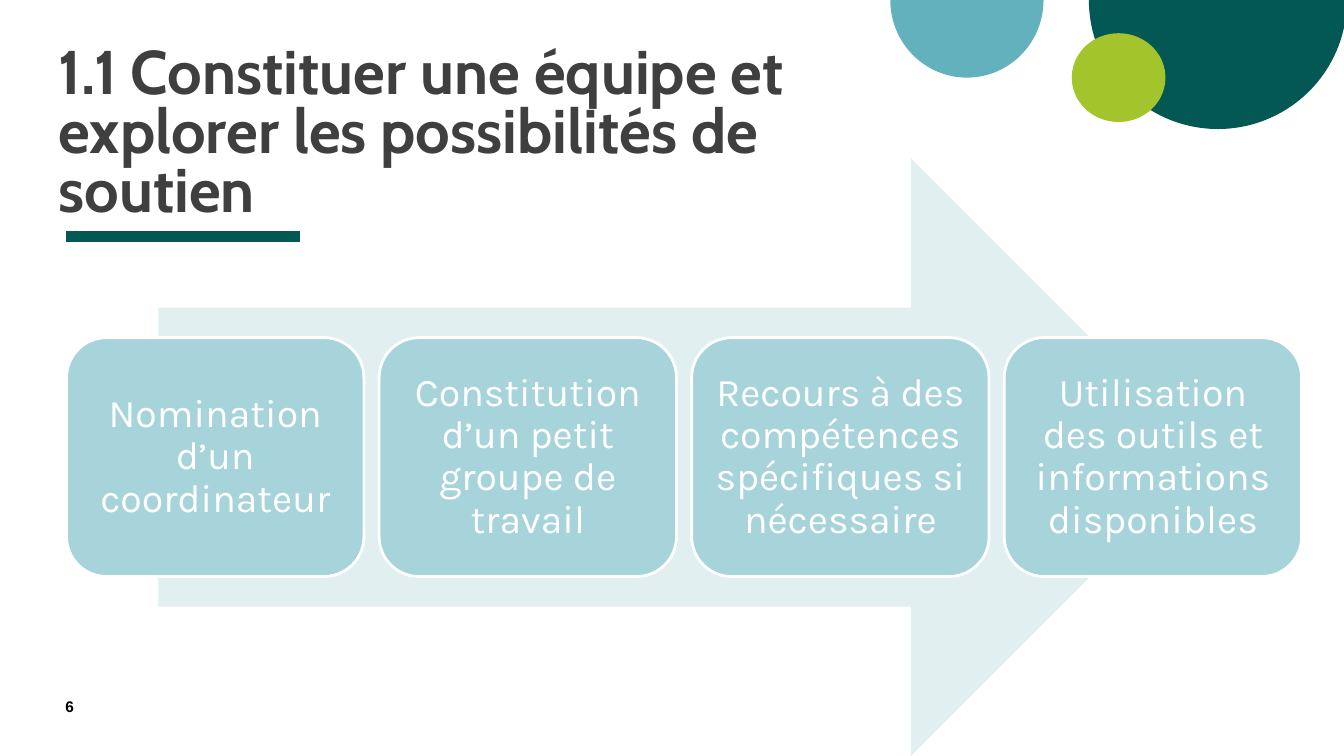
from dataclasses import dataclass

from lxml import etree
from pptx import Presentation
from pptx.dml.color import RGBColor
from pptx.enum.shapes import MSO_CONNECTOR, MSO_SHAPE
from pptx.enum.text import MSO_ANCHOR, MSO_AUTO_SIZE, PP_ALIGN
from pptx.oxml.ns import qn
from pptx.util import Inches, Pt

PIE, OVAL = MSO_SHAPE.PIE, MSO_SHAPE.OVAL
ARROW, ROUNDED = MSO_SHAPE.RIGHT_ARROW, MSO_SHAPE.ROUNDED_RECTANGLE
STRAIGHT = MSO_CONNECTOR.STRAIGHT
TOP, MIDDLE, BOTTOM = MSO_ANCHOR.TOP, MSO_ANCHOR.MIDDLE, MSO_ANCHOR.BOTTOM
LEFT, CENTER = PP_ALIGN.LEFT, PP_ALIGN.CENTER
NO_AUTOFIT = MSO_AUTO_SIZE.NONE

DARK_GREEN = "035854"
WHITE = "FFFFFF"
STEP_LEFT, STEP_PITCH = 0.66, 3.1


@dataclass
class Block:
    kind: int
    left: float
    top: float
    width: float
    height: float
    fill: str
    adjustments: tuple = ()
    line: str = ""


DECORATIONS = [
    Block(PIE, 10.8, -1.28, 2.56, 2.56, DARK_GREEN, (0, 108)),
    Block(PIE, 8.83, -0.77, 1.52, 1.54, "64B1BE", (0, 108)),
    Block(OVAL, 10.63, 0.33, 0.93, 0.88, "A3C42A"),
]
PROCESS_ARROW = Block(ARROW, 1.57, 1.57, 10.43, 5.93, "E1EFF1", (0.5, 0.5))
STEPS = [
    "Nomination d’un coordinateur",
    "Constitution d’un petit groupe de travail",
    "Recours à des compétences spécifiques si nécessaire",
    "Utilisation des outils et informations disponibles",
]


def rgb(value: str) -> RGBColor:
    return RGBColor.from_string(value)


def place(sp, left: float, top: float, width: float, height: float) -> None:
    sp.left, sp.top = Inches(left), Inches(top)
    sp.width, sp.height = Inches(width), Inches(height)


def write(sp, text: str, *, font: str, size: float, color: str, bold: bool = False,
          align: int = LEFT, anchor: int = TOP, inset: float = 0,
          spacing: float = 1.0) -> None:
    tf = sp.text_frame
    tf.word_wrap = True
    tf.auto_size = NO_AUTOFIT
    tf.vertical_anchor = anchor
    tf.margin_left = tf.margin_right = tf.margin_top = tf.margin_bottom = Inches(inset)
    p = tf.paragraphs[0]
    p.alignment = align
    p.line_spacing = spacing
    r = p.add_run()
    r.text = text
    r.font.name = font
    r.font.size = Pt(size)
    r.font.bold = bold
    r.font.color.rgb = rgb(color)


def add_block(s, block: Block):
    sp = s.shapes.add_shape(block.kind, Inches(block.left), Inches(block.top),
                            Inches(block.width), Inches(block.height))
    sp.shadow.inherit = False
    for i, value in enumerate(block.adjustments):
        sp.adjustments[i] = value
    sp.fill.solid()
    sp.fill.fore_color.rgb = rgb(block.fill)
    if block.line:
        sp.line.color.rgb = rgb(block.line)
        sp.line.width = Pt(2)
    else:
        sp.line.fill.background()
    return sp


def add_rule(s, left: float, right: float, y: float) -> None:
    rule = s.shapes.add_connector(STRAIGHT, Inches(left), Inches(y), Inches(right), Inches(y))
    rule.line.color.rgb = rgb(DARK_GREEN)
    rule.line.width = Pt(8)
    etree.SubElement(rule._element.spPr, qn("a:effectLst"))


def main() -> None:
    prs = Presentation()
    prs.slide_width, prs.slide_height = Inches(13.33), Inches(7.5)
    s = prs.slides.add_slide(prs.slide_layouts[5])

    for decoration in DECORATIONS:
        add_block(s, decoration)
    add_rule(s, 0.65, 2.98, 2.35)

    title = s.shapes.title
    place(title, 0.58, 0.17, 8.72, 2.06)
    write(title, "1.1 Constituer une équipe et explorer les possibilités de soutien",
          font="Cabin", size=44, color="3F3F3F", bold=True, anchor=BOTTOM, spacing=0.8)

    number = s.shapes.add_textbox(Inches(0.65), Inches(6.92), Inches(0.57), Inches(0.27))
    write(number, "6", font="Arial", size=11, color="000000", bold=True)

    add_block(s, PROCESS_ARROW)
    for i, text in enumerate(STEPS):
        step = add_block(s, Block(ROUNDED, STEP_LEFT + i * STEP_PITCH, 3.35, 2.95, 2.37,
                                  "A7D3DA", (0.167,), WHITE))
        write(step, text, font="Karla", size=28, color=WHITE, align=CENTER,
              anchor=MIDDLE, inset=0.12, spacing=0.9)

    prs.save("out.pptx")


if __name__ == "__main__":
    main()
